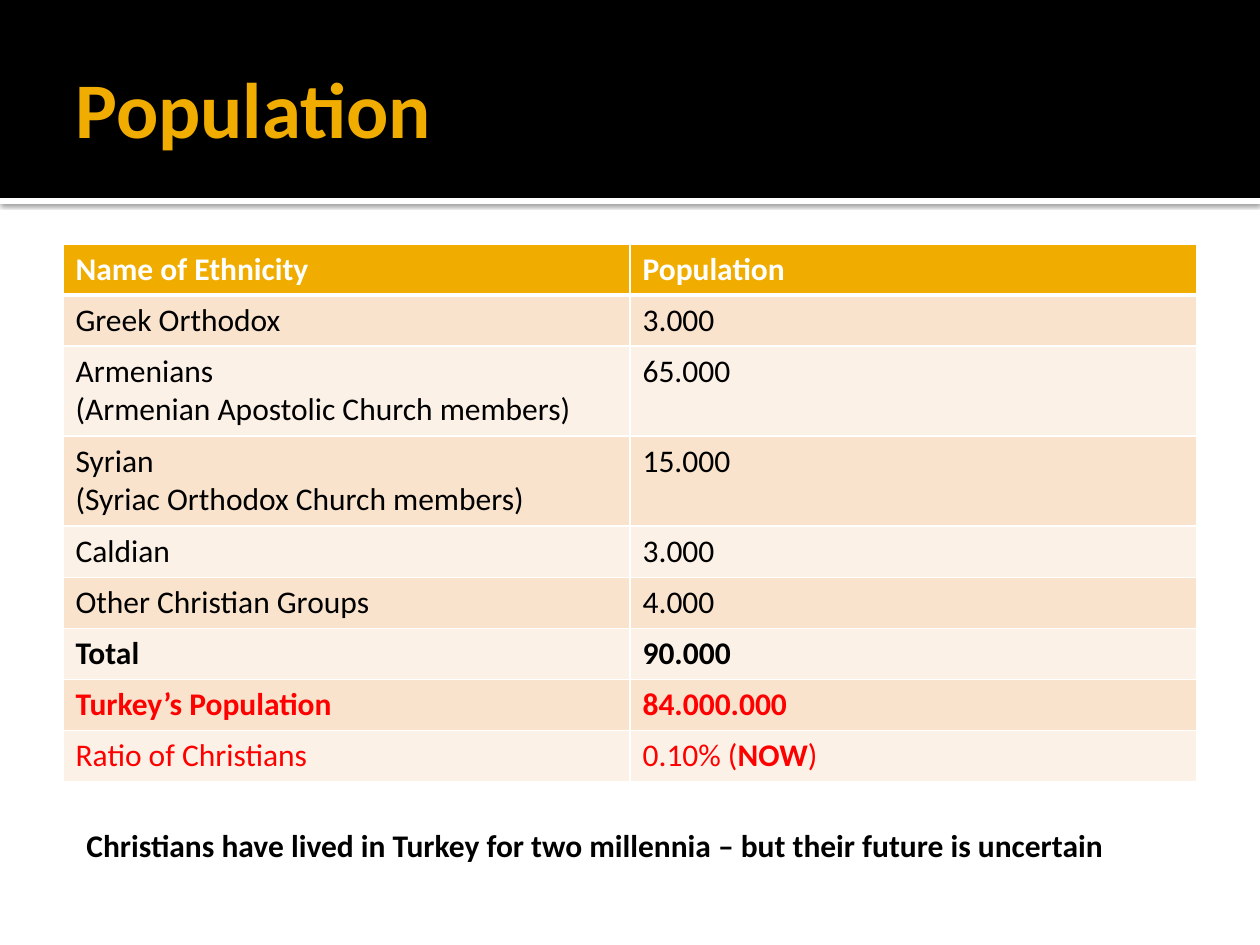
from lxml import etree
from pptx import Presentation
from pptx.dml.color import RGBColor
from pptx.enum.shapes import MSO_SHAPE
from pptx.enum.text import MSO_ANCHOR
from pptx.oxml.ns import qn
from pptx.util import Emu, Pt

RECTANGLE = MSO_SHAPE.RECTANGLE
MIDDLE = MSO_ANCHOR.MIDDLE
TITLE_ONLY = 5

TITLE = "Population"
HEADER = ("Name of Ethnicity", "Population")
ROWS = [
    ("Greek Orthodox", "3.000"),
    ("Armenians\n(Armenian Apostolic Church members)", "65.000"),
    ("Syrian\n(Syriac Orthodox Church members)", "15.000"),
    ("Caldian", "3.000"),
    ("Other Christian Groups", "4.000"),
    ("Total", "90.000"),
    ("Turkey’s Population", "84.000.000"),
    ("Ratio of Christians", ["0.10% (", ("NOW", True), ")"]),
]
BOLD_ROWS = {"Total", "Turkey’s Population"}
RED_ROWS = {"Turkey’s Population", "Ratio of Christians"}
CLOSING = "Christians have lived in Turkey for two millennia – but their future is\u00a0uncertain"

THEME = {
    "font": "Calibri",
    "title_size": 45,
    "body_size": 18,
    "gold": "F0AD00",
    "black": "000000",
    "white": "FFFFFF",
    "red": "FF0000",
    "bands": ("F9E3CC", "FCF1E7"),
}

WIDTH, HEIGHT = 1260, 945
BAND_HEIGHT, STRIP_HEIGHT = 198, 6
TABLE_LEFT, TABLE_TOP, TABLE_WIDTH = 63, 244, 1134
ROW_HEIGHTS = {1: 51, 2: 90}


def px(value):
    return Emu(round(value * 914400 / 126))


def write(frame, text, size=THEME["body_size"], color=THEME["black"], bold=False):
    pieces = [text] if isinstance(text, str) else text
    paragraph = frame.paragraphs[0]
    for piece in pieces:
        content, strong = (piece, bold) if isinstance(piece, str) else piece
        for index, line in enumerate(content.split("\n")):
            if index:
                paragraph = frame.add_paragraph()
            run = paragraph.add_run()
            run.text = line
            run.font.name = THEME["font"]
            run.font.size = Pt(size)
            run.font.bold = strong
            run.font.color.rgb = RGBColor.from_string(color)


def add_bar(slide, top, height, color):
    bar = slide.shapes.add_shape(RECTANGLE, 0, px(top), px(WIDTH), px(height))
    bar.shadow.inherit = False
    bar.fill.solid()
    bar.fill.fore_color.rgb = RGBColor.from_string(color)
    bar.line.fill.background()
    return bar


def add_color(parent, color):
    return etree.SubElement(parent, qn("a:srgbClr"), val=color)


def cast_shadow(shape):
    effects = shape._element.spPr.find(qn("a:effectLst"))
    shadow = etree.SubElement(
        effects, qn("a:outerShdw"), blurRad=str(Pt(2.5)), dist=str(Pt(0.8)),
        dir="5400000", algn="tl", rotWithShape="0",
    )
    etree.SubElement(add_color(shadow, THEME["black"]), qn("a:alpha"), val="60000")


def set_borders(cell, top=1, bottom=1):
    properties = cell._tc.get_or_add_tcPr()
    widths = {"a:lnL": 1, "a:lnR": 1, "a:lnT": top, "a:lnB": bottom}
    for index, (tag, width) in enumerate(widths.items()):
        line = etree.Element(qn(tag), w=str(Pt(width)))
        add_color(etree.SubElement(line, qn("a:solidFill")), THEME["white"])
        properties.insert(index, line)


def fill_cell(cell, text, fill, top=1, bottom=1, **style):
    cell.fill.solid()
    cell.fill.fore_color.rgb = RGBColor.from_string(fill)
    set_borders(cell, top, bottom)
    write(cell.text_frame, text, **style)


def add_population_table(slide):
    heights = [ROW_HEIGHTS[name.count("\n") + 1] for name, _ in [HEADER, *ROWS]]
    table = slide.shapes.add_table(
        len(heights), len(HEADER), px(TABLE_LEFT), px(TABLE_TOP),
        px(TABLE_WIDTH), px(sum(heights)),
    ).table
    for row, height in zip(table.rows, heights):
        row.height = px(height)
    for column, text in enumerate(HEADER):
        fill_cell(table.cell(0, column), text, THEME["gold"], bottom=3,
                  color=THEME["white"], bold=True)
    for index, row in enumerate(ROWS):
        color = THEME["red"] if row[0] in RED_ROWS else THEME["black"]
        for column, text in enumerate(row):
            fill_cell(table.cell(index + 1, column), text, THEME["bands"][index % 2],
                      top=1 if index else 3, color=color, bold=row[0] in BOLD_ROWS)


def add_title(slide):
    title = slide.shapes.title
    slide.shapes._spTree.append(title._element)
    title.left, title.top, title.width, title.height = map(px, (63, 21, 1134, 173))
    frame = title.text_frame
    frame.vertical_anchor = MIDDLE
    frame.margin_left = Pt(7.2)
    frame.margin_right = frame.margin_top = frame.margin_bottom = Pt(3.6)
    write(frame, TITLE, size=THEME["title_size"], color=THEME["gold"], bold=True)
    frame.paragraphs[0].alignment = 1


def main():
    presentation = Presentation()
    presentation.slide_width, presentation.slide_height = px(WIDTH), px(HEIGHT)
    slide = presentation.slides.add_slide(presentation.slide_layouts[TITLE_ONLY])
    cast_shadow(add_bar(slide, BAND_HEIGHT, STRIP_HEIGHT, THEME["white"]))
    add_bar(slide, 0, BAND_HEIGHT, THEME["black"])
    add_title(slide)
    add_population_table(slide)
    closing = slide.shapes.add_textbox(px(74), px(820), px(1080), px(89)).text_frame
    closing.word_wrap = True
    write(closing, CLOSING, bold=True)
    presentation.save("out.pptx")


if __name__ == "__main__":
    main()
